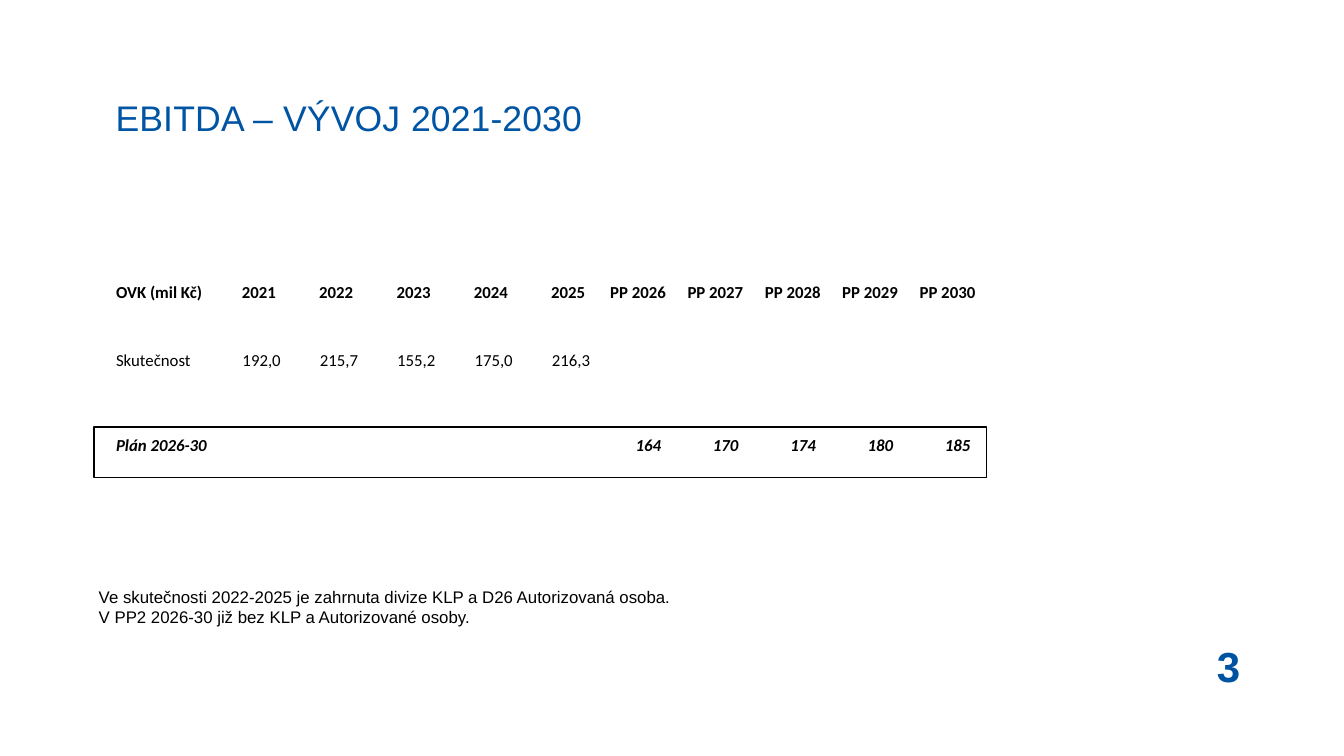
"""Build the EBITDA 2021-2030 slide with its table of actual and planned values."""
from pptx import Presentation
from pptx.dml.color import RGBColor
from pptx.enum.shapes import MSO_SHAPE
from pptx.enum.text import MSO_ANCHOR, MSO_AUTO_SIZE, PP_ALIGN
from pptx.util import Pt

COLORS = {"title": "0054A4", "number": "0053A0", "text": "000000"}


def format_font(font, name, size, color, bold=False, italic=False):
    font.name, font.size = name, Pt(size)
    font.bold, font.italic = bold, italic
    font.color.rgb = RGBColor.from_string(COLORS[color])


def add_text(slide, left, top, width, height, text):
    frame = slide.shapes.add_textbox(Pt(left), Pt(top), Pt(width), Pt(height)).text_frame
    frame.word_wrap = True
    frame.text = text
    return frame


presentation = Presentation()
presentation.slide_width, presentation.slide_height = Pt(1920), Pt(1080)
slide = presentation.slides.add_slide(presentation.slide_layouts[5])

title = slide.shapes.title
title.left, title.top, title.width, title.height = Pt(165), Pt(84), Pt(1214), Pt(167)
frame = title.text_frame
frame.auto_size = MSO_AUTO_SIZE.NONE
frame.vertical_anchor = MSO_ANCHOR.MIDDLE
frame.margin_left = frame.margin_right = frame.margin_top = frame.margin_bottom = 0
paragraph = frame.paragraphs[0]
paragraph.alignment = PP_ALIGN.LEFT
for text, spacing in (("EBITDA – VÝVOJ ", "30"), ("2021-2030", "20")):
    run = paragraph.add_run()
    run.text = text
    format_font(run.font, "Arial", 50.8, "title")
    run.font._element.set("spc", spacing)

frame = add_text(slide, 1681, 911, 148, 68, "3")
paragraph = frame.paragraphs[0]
paragraph.alignment = PP_ALIGN.CENTER
format_font(paragraph.runs[0].font, "Arial", 60, "number", bold=True)

actual_years = [str(year) for year in range(2021, 2026)]
plan_years = [f"PP {year}" for year in range(2026, 2031)]
blank = [""] * 5
rows = [
    ["OVK (mil Kč)"] + actual_years + plan_years,
    ["Skutečnost", "192,0", "215,7", "155,2", "175,0", "216,3"] + blank,
    ["Plán 2026-30"] + blank + ["164", "170", "174", "180", "185"],
]
table = slide.shapes.add_table(3, 11, Pt(165), Pt(370), Pt(1258.5), Pt(339)).table
table.first_row = table.horz_banding = False
for index, column in enumerate(table.columns):
    column.width = Pt(110.5 if index else 153.5)
for row, height in zip(table.rows, (96.5, 96.5, 146)):
    row.height = Pt(height)
for row_index, values in enumerate(rows):
    for column_index, value in enumerate(values):
        cell = table.cell(row_index, column_index)
        cell.fill.background()
        cell.vertical_anchor = MSO_ANCHOR.MIDDLE
        cell.margin_left = cell.margin_right = cell.margin_top = Pt(0.75)
        cell.margin_bottom = 0
        if not value:
            continue
        cell.text_frame.text = value
        paragraph = cell.text_frame.paragraphs[0]
        if row_index and column_index:
            paragraph.alignment = PP_ALIGN.CENTER
        elif value in actual_years:
            cell.margin_left = Pt(27)
        format_font(paragraph.runs[0].font, "Calibri", 24, "text",
                    bold=row_index != 1, italic=row_index == 2)

plan_frame = slide.shapes.add_shape(MSO_SHAPE.RECTANGLE, Pt(134), Pt(610), Pt(1275), Pt(72))
plan_frame.shadow.inherit = False
plan_frame.fill.background()
plan_frame.line.color.rgb = RGBColor.from_string(COLORS["text"])
plan_frame.line.width = Pt(2)

frame = add_text(slide, 134, 834.5, 1353.5, 65.5,
                 "Ve skutečnosti 2022-2025 je zahrnuta divize KLP a D26 Autorizovaná osoba.\n"
                 "V PP2 2026-30 již bez KLP a Autorizované osoby.")
frame.auto_size = MSO_AUTO_SIZE.SHAPE_TO_FIT_TEXT
for paragraph in frame.paragraphs:
    format_font(paragraph.runs[0].font, "Arial", 24, "text")

presentation.save("out.pptx")
